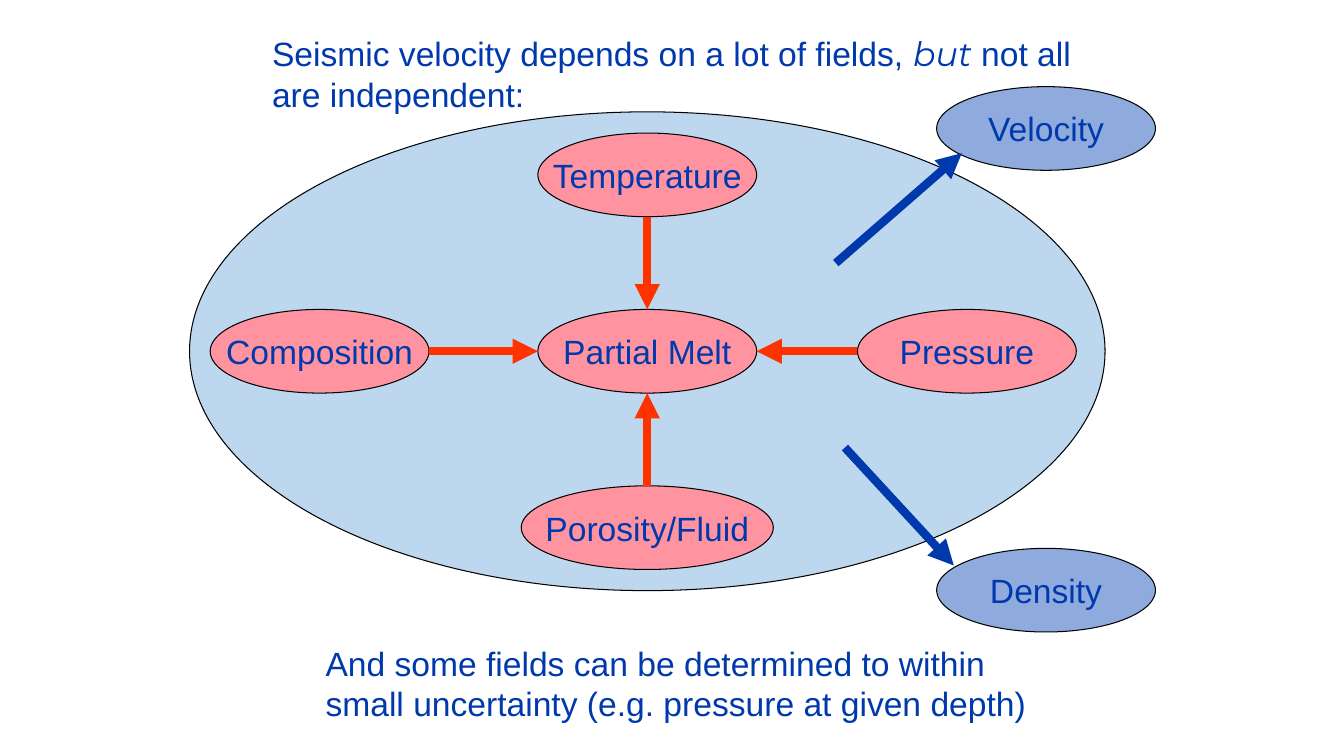
from pptx import Presentation
from pptx.dml.color import RGBColor
from pptx.enum import shapes, text
from pptx.oxml.ns import qn
from pptx.util import Inches, Pt
from lxml import etree

BLUE = RGBColor(0x00, 0x39, 0xAC)
RED = RGBColor(0xFF, 0x33, 0x00)
BLACK = RGBColor(0x00, 0x00, 0x00)
PALE_BLUE = RGBColor(0xBD, 0xD7, 0xEE)
PINK = RGBColor(0xFF, 0x94, 0xA0)
MID_BLUE = RGBColor(0x8F, 0xAA, 0xDC)

# Content: lines of text as runs, where a run is (text, font, italic)
STATEMENT = [
    [("Seismic velocity depends on a lot of fields, ", "Arial", False),
     ("but", "Montserrat", True),
     (" not all", "Arial", False)],
    [("are independent:", "Arial", False)],
]
REMARK = [
    [("And some fields can be determined to within", "Arial", False)],
    [("small uncertainty (e.g. pressure at given depth)", "Arial", False)],
]
MELT = "Partial Melt"
# Factor: name, offset of its centre from the melt, width
FACTORS = [
    ("Composition", -3.25, 0, 2.17),
    ("Porosity/Fluid", 0, 1.75, 2.5),
    ("Temperature", 0, -1.75, 2.17),
    ("Pressure", 3.17, 0, 2.17),
]
# Outcome: name, top of its ellipse, arrow start, arrow end
OUTCOMES = [
    ("Density", 5.44, (8.38, 4.44), (9.46, 5.61)),
    ("Velocity", 0.86, (8.29, 2.61), (9.54, 1.52)),
]

# Layout in inches
MELT_X, MELT_Y = 6.42, 3.485
NODE_W, NODE_H = 2.17, 0.83
FIELD_W, FIELD_H = 9.08, 4.75
OUTCOME_LEFT = 9.29

deck = Presentation()
deck.slide_width, deck.slide_height = Inches(13.33), Inches(7.5)
slide = deck.slides.add_slide(deck.slide_layouts[6])


def write(frame, lines, size=24, color=BLUE, align=text.PP_ALIGN.LEFT, wrap=True):
    frame.word_wrap = wrap
    for number, line in enumerate(lines):
        paragraph = frame.add_paragraph() if number else frame.paragraphs[0]
        paragraph.alignment = align
        for words, font, italic in line:
            run = paragraph.add_run()
            run.text = words
            run.font.name, run.font.size = font, Pt(size)
            run.font.italic = italic
            run.font.color.rgb = color


def ellipse(left, top, width, height, fill, label=None):
    oval = slide.shapes.add_shape(shapes.MSO_SHAPE.OVAL, Inches(left), Inches(top),
                                  Inches(width), Inches(height))
    oval.shadow.inherit = False
    oval.fill.solid()
    oval.fill.fore_color.rgb = fill
    oval.line.color.rgb = BLACK
    oval.line.width = Pt(0.75)
    if label:
        oval.text_frame.vertical_anchor = text.MSO_ANCHOR.MIDDLE
        write(oval.text_frame, [[(label, "Arial", False)]],
              align=text.PP_ALIGN.CENTER, wrap=False)


def arrow(start, end, color):
    line = slide.shapes.add_connector(shapes.MSO_CONNECTOR.STRAIGHT,
                                      *map(Inches, start + end))
    line.line.color.rgb = color
    line.line.width = Pt(6)
    etree.SubElement(line.line._get_or_add_ln(), qn("a:tailEnd"), type="triangle")
    etree.SubElement(line._element.spPr, qn("a:effectLst"))


def text_block(lines, left, top, width, height):
    box = slide.shapes.add_textbox(*map(Inches, (left, top, width, height)))
    write(box.text_frame, lines)


# Field of related factors, with the melt at its centre
ellipse(MELT_X - FIELD_W / 2, MELT_Y - FIELD_H / 2, FIELD_W, FIELD_H, PALE_BLUE)
ellipse(MELT_X - NODE_W / 2, MELT_Y - NODE_H / 2, NODE_W, NODE_H, PINK, MELT)

# Factors, each with an arrow from its inner edge to the melt's edge
for name, dx, dy, width in FACTORS:
    x, y = MELT_X + dx, MELT_Y + dy
    ellipse(x - width / 2, y - NODE_H / 2, width, NODE_H, PINK, name)
    side_x = (dx > 0) - (dx < 0)
    side_y = (dy > 0) - (dy < 0)
    reach_x, reach_y = side_x * NODE_W / 2, side_y * NODE_H / 2
    arrow((x - reach_x, y - reach_y), (MELT_X + reach_x, MELT_Y + reach_y), RED)

# Outcomes
for name, top, start, end in OUTCOMES:
    ellipse(OUTCOME_LEFT, top, NODE_W, NODE_H, MID_BLUE, name)
    arrow(start, end, BLUE)

# Statements above and below
text_block(STATEMENT, 2.6, 0.28, 8.3, 0.91)
text_block(REMARK, 3.13, 6.33, 7.22, 0.91)

deck.save("out.pptx")
